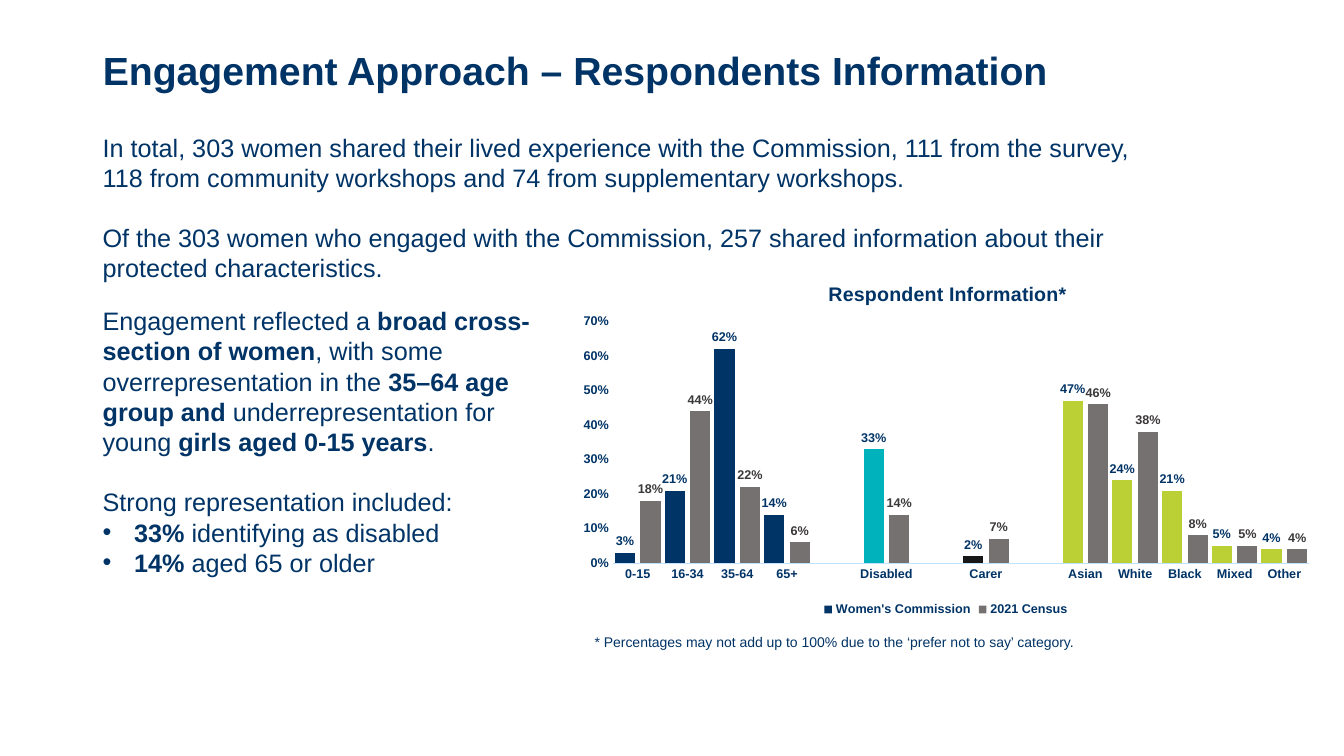
import dataclasses
import typing

import lxml.etree
import pptx
import pptx.chart.chart
import pptx.chart.data
import pptx.dml.color
import pptx.enum.chart
import pptx.enum.text
import pptx.oxml.ns
import pptx.util

Pt = pptx.util.Pt
NAVY = "003366"
GREY = "767171"
LIME = "BBD035"
FONT = "Arial"
LINE_GAP = 21.5


@dataclasses.dataclass(frozen=True)
class Span:
    text: str
    bold: bool = False


@dataclasses.dataclass(frozen=True)
class Para:
    spans: tuple[Span, ...]
    space_before: float = 0
    bullet: bool = False


@dataclasses.dataclass(frozen=True)
class TextBlock:
    left: float
    top: float
    width: float
    height: float
    size: float
    paras: tuple[Para, ...]


@dataclasses.dataclass(frozen=True)
class BarSeries:
    name: str
    values: tuple[float | None, ...]
    fill: str
    label: str
    points: dict[int, str]


TEXT_BLOCKS = (
    TextBlock(66.24, 90.72, 776.88, 53.28, 18, (
        Para((Span("In total, 303 women shared their lived experience with the Commission, 111 from "
                   "the survey, 118 from community workshops and 74 from supplementary workshops."),)),
        Para((Span("Of the 303 women who engaged with the Commission, 257 shared information about "
                   "their protected characteristics."),), LINE_GAP),
    )),
    TextBlock(66.24, 214.56, 339.12, 90, 18, (
        Para((
            Span("Engagement reflected a "),
            Span("broad cross-section of women", True),
            Span(", with some overrepresentation in the "),
            Span("35–64 age group and ", True),
            Span("underrepresentation for young "),
            Span("girls aged 0-15 years", True),
            Span("."),
        )),
        Para((Span("Strong representation included:"),), LINE_GAP),
        Para((Span("33%", True), Span(" identifying as disabled")), bullet=True),
        Para((Span("14%", True), Span(" aged 65 or older")), bullet=True),
    )),
    TextBlock(417.6, 449.28, 357.12, 14.4, 10, (
        Para((Span("* Percentages may not add up to 100% due to the ‘prefer not to say’ category."),)),
    )),
)

CATEGORIES = ("0-15", "16-34", "35-64", "65+", "", "Disabled", "", "Carer", "",
              "Asian", "White", "Black", "Mixed", "Other")
SERIES = (
    BarSeries("Women's Commission",
              (0.03, 0.21, 0.62, 0.14, None, 0.33, None, 0.02, None, 0.47, 0.24, 0.21, 0.05, 0.04),
              NAVY, NAVY, {5: "00B2BC", 7: "181717"} | {index: LIME for index in range(9, 14)}),
    BarSeries("2021 Census",
              (0.18, 0.44, 0.22, 0.06, None, 0.14, None, 0.07, None, 0.46, 0.38, 0.08, 0.05, 0.04),
              GREY, "3B3838", {}),
)


def colour(value: str) -> pptx.dml.color.RGBColor:
    return pptx.dml.color.RGBColor.from_string(value)


def style_font(font: typing.Any, size: float, bold: bool = False, value: str = NAVY) -> None:
    font.name = FONT
    font.size = Pt(size)
    font.bold = bold
    font.color.rgb = colour(value)


def add_bullet(paragraph: typing.Any) -> None:
    properties = paragraph._p.get_or_add_pPr()
    properties.set("marL", str(Pt(22.5)))
    properties.set("indent", str(-Pt(22.5)))
    lxml.etree.SubElement(properties, pptx.oxml.ns.qn("a:buFont")).set("typeface", FONT)
    lxml.etree.SubElement(properties, pptx.oxml.ns.qn("a:buChar")).set("char", "•")


def add_text(page: typing.Any, block: TextBlock) -> None:
    box = page.shapes.add_textbox(Pt(block.left), Pt(block.top), Pt(block.width), Pt(block.height))
    frame = box.text_frame
    frame.word_wrap = True
    frame.auto_size = pptx.enum.text.MSO_AUTO_SIZE.SHAPE_TO_FIT_TEXT
    for index, para in enumerate(block.paras):
        paragraph = frame.add_paragraph() if index else frame.paragraphs[0]
        if para.space_before:
            paragraph.space_before = Pt(para.space_before)
        if para.bullet:
            add_bullet(paragraph)
        for span in para.spans:
            run = paragraph.add_run()
            run.text = span.text
            style_font(run.font, block.size, span.bold)


def set_layout(parent: typing.Any, position: int, settings: dict[str, str]) -> None:
    qn = pptx.oxml.ns.qn
    for existing in parent.findall(qn("c:layout")):
        parent.remove(existing)
    layout = lxml.etree.Element(qn("c:layout"))
    manual = lxml.etree.SubElement(layout, qn("c:manualLayout"))
    for name, value in settings.items():
        lxml.etree.SubElement(manual, qn(f"c:{name}")).set("val", value)
    parent.insert(position, layout)


def add_title(page: typing.Any) -> None:
    title = page.shapes.title
    title.left, title.top, title.width, title.height = Pt(66.24), Pt(0), Pt(769.68), Pt(104.4)
    frame = title.text_frame
    frame.text = "Engagement Approach – Respondents Information"
    frame.word_wrap = True
    frame.auto_size = pptx.enum.text.MSO_AUTO_SIZE.NONE
    frame.vertical_anchor = pptx.enum.text.MSO_ANCHOR.MIDDLE
    paragraph = frame.paragraphs[0]
    paragraph.alignment = pptx.enum.text.PP_ALIGN.LEFT
    paragraph.line_spacing = 0.9
    style_font(paragraph.runs[0].font, 28, True)


def style_axes(chart: pptx.chart.chart.Chart) -> None:
    for axis in (chart.category_axis, chart.value_axis):
        axis.has_major_gridlines = False
        axis.major_tick_mark = pptx.enum.chart.XL_TICK_MARK.NONE
        axis.minor_tick_mark = pptx.enum.chart.XL_TICK_MARK.NONE
        style_font(axis.tick_labels.font, 9, True)
    chart.category_axis.format.line.color.rgb = colour("C2E0FF")
    chart.category_axis.format.line.width = Pt(0.75)
    values = chart.value_axis
    values.format.line.fill.background()
    values.minimum_scale, values.maximum_scale, values.major_unit = 0, 0.7, 0.1
    values.tick_labels.number_format = "0%"
    values.tick_labels.number_format_is_linked = False


def style_series(bars: typing.Any, series: BarSeries) -> None:
    bars.format.fill.solid()
    bars.format.fill.fore_color.rgb = colour(series.fill)
    for index, value in series.points.items():
        fill = bars.points[index].format.fill
        fill.solid()
        fill.fore_color.rgb = colour(value)
    labels = bars.data_labels
    labels.show_value = True
    labels.position = pptx.enum.chart.XL_LABEL_POSITION.OUTSIDE_END
    labels.number_format = "0%"
    labels.number_format_is_linked = False
    style_font(labels.font, 9, True, series.label)


def add_chart(page: typing.Any) -> None:
    data = pptx.chart.data.CategoryChartData(number_format="0%")
    data.categories = CATEGORIES
    for series in SERIES:
        data.add_series(series.name, series.values)
    chart = page.shapes.add_chart(pptx.enum.chart.XL_CHART_TYPE.COLUMN_CLUSTERED,
                                  Pt(405.36), Pt(185.76), Pt(540.72), Pt(257.76), data).chart
    style_font(chart.font, 10)
    chart.has_title = True
    frame = chart.chart_title.text_frame
    frame.text = "Respondent Information*"
    style_font(frame.paragraphs[0].runs[0].font, 14, True)
    chart.has_legend = True
    chart.legend.position = pptx.enum.chart.XL_LEGEND_POSITION.BOTTOM
    chart.legend.include_in_layout = False
    style_font(chart.legend.font, 9, True)
    style_axes(chart)
    plot = chart.plots[0]
    plot.gap_width, plot.overlap, plot.vary_by_categories = 20, -27, False
    for bars, series in zip(plot.series, SERIES):
        style_series(bars, series)
    set_layout(chart.chart_title._element, 1,
               {"xMode": "edge", "yMode": "edge", "x": "0.34", "y": "0.05"})
    set_layout(chart._chartSpace.chart.plotArea, 0,
               {"layoutTarget": "inner", "xMode": "edge", "yMode": "edge",
                "x": "0.06", "y": "0.17", "w": "0.92", "h": "0.67"})


def main() -> None:
    deck = pptx.Presentation()
    deck.slide_width, deck.slide_height = Pt(960), Pt(540)
    page = deck.slides.add_slide(deck.slide_layouts[5])
    add_title(page)
    for block in TEXT_BLOCKS:
        add_text(page, block)
    add_chart(page)
    deck.save("out.pptx")


if __name__ == "__main__":
    main()
